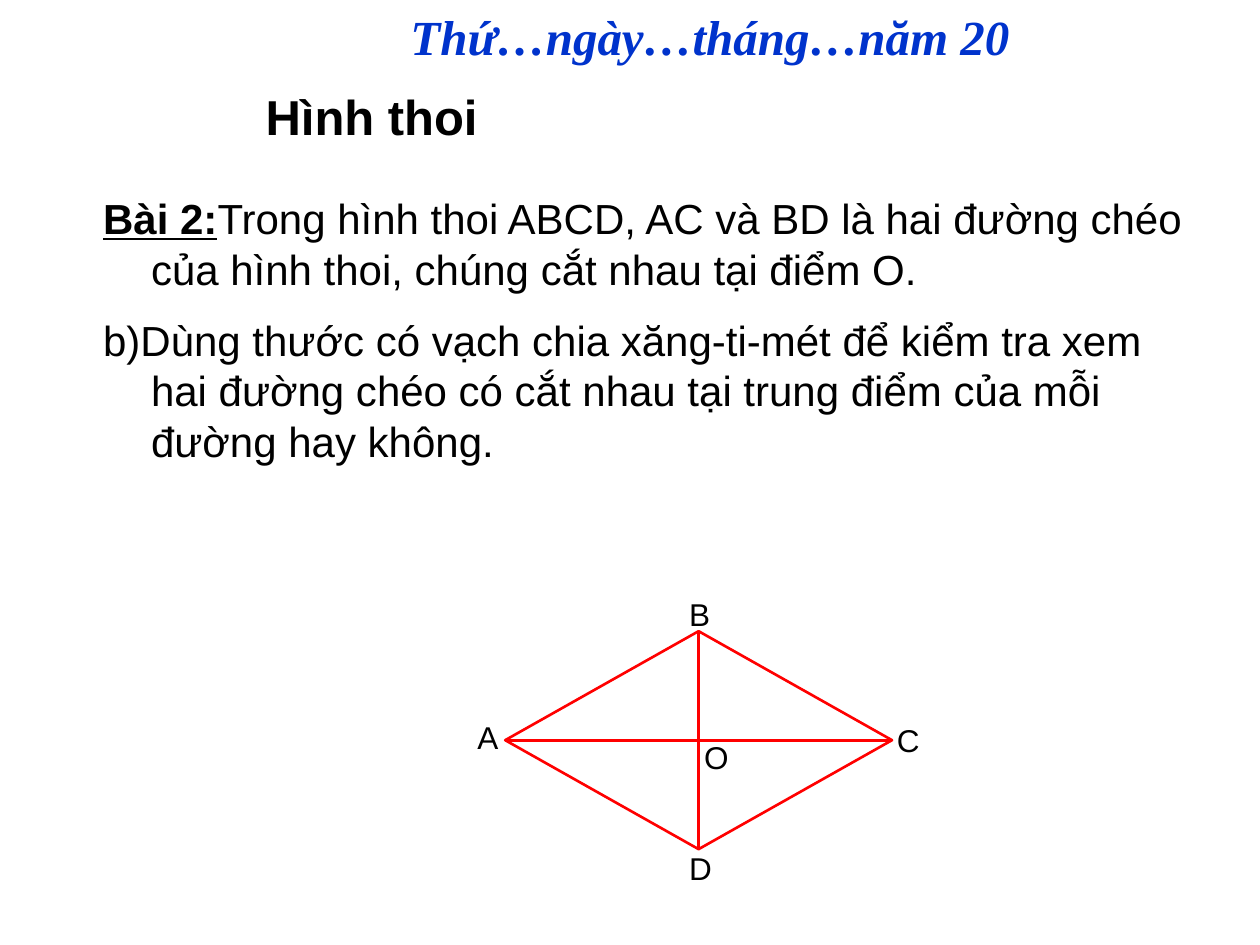
from dataclasses import dataclass

from lxml import etree
from pptx import Presentation
from pptx.dml.color import RGBColor
from pptx.enum.shapes import MSO_CONNECTOR, MSO_SHAPE
from pptx.oxml.ns import qn
from pptx.util import Inches, Pt

RHOMBUS = MSO_SHAPE.FLOWCHART_DECISION
STRAIGHT = MSO_CONNECTOR.STRAIGHT
TOP, LEFT, BOTTOM, RIGHT = range(4)
BLACK, BLUE, RED = "000000", "0033CC", "FF0000"
HANGING = Inches(0.38)


@dataclass
class Label:
    text: str
    left: float
    top: float
    width: float
    height: float = 0.4
    size: int = 18
    font: str = "Arial"
    color: str = BLACK
    bold: bool = False
    italic: bool = False
    wrap: bool = True


HEADINGS = [
    Label("Hình thoi", 2.01, 0.64, 3.25, 0.57, size=28, bold=True),
    Label("Thứ…ngày…tháng…năm 20", 3.16, 0, 4.96, 0.57, size=28,
          font="Times New Roman", color=BLUE, bold=True, italic=True, wrap=False),
]
POINTS = [
    Label("A", 3.69, 5.65, 0.4),
    Label("B", 5.37, 4.67, 0.42),
    Label("C", 7.02, 5.67, 0.42),
    Label("D", 5.37, 6.69, 0.42),
    Label("O", 5.49, 5.81, 0.5),
]
EXERCISE = [
    ("Bài 2:", "Trong hình thoi ABCD, AC và BD là hai đường chéo của hình thoi, "
               "chúng cắt nhau tại điểm O."),
    ("", "b)Dùng thước có vạch chia xăng-ti-mét để kiểm tra xem hai đường chéo "
         "có cắt nhau tại trung điểm của mỗi đường hay không."),
]


def rgb(color: str) -> RGBColor:
    return RGBColor.from_string(color)


def add_frame(page, left: float, top: float, width: float, height: float, wrap: bool = True):
    box = page.shapes.add_textbox(Inches(left), Inches(top), Inches(width), Inches(height))
    box.text_frame.word_wrap = wrap
    return box.text_frame


def set_font(font, name: str, size: int, color: str) -> None:
    font.name = name
    font.size = Pt(size)
    font.color.rgb = rgb(color)


def add_label(page, label: Label) -> None:
    frame = add_frame(page, label.left, label.top, label.width, label.height, label.wrap)
    para = frame.paragraphs[0]
    para.text = label.text
    set_font(para.font, label.font, label.size, label.color)
    para.font.bold = label.bold
    para.font.italic = label.italic


def add_exercise(page) -> None:
    frame = add_frame(page, 0.72, 1.48, 8.82, 2.3)
    for index, (lead, text) in enumerate(EXERCISE):
        para = frame.add_paragraph() if index else frame.paragraphs[0]
        set_font(para.font, "Arial", 24, BLACK)
        if index:
            para.space_before = Pt(12)
        properties = para._p.get_or_add_pPr()
        properties.set("marL", str(HANGING))
        properties.set("indent", str(-HANGING))
        if lead:
            span = para.add_run()
            span.text = lead
            span.font.bold = True
            span.font.underline = True
        para.add_run().text = text


def style_line(shape) -> None:
    shape.line.color.rgb = rgb(RED)
    shape.line.width = Pt(1.5)


def add_diagonal(group, rhombus, start: int, end: int) -> None:
    middle_x = rhombus.left + rhombus.width // 2
    middle_y = rhombus.top + rhombus.height // 2
    diagonal = group.shapes.add_connector(STRAIGHT, middle_x, middle_y, middle_x, middle_y)
    diagonal.begin_connect(rhombus, start)
    diagonal.end_connect(rhombus, end)
    style_line(diagonal)
    etree.SubElement(diagonal._element.spPr, qn("a:effectLst"))


def add_rhombus(page) -> None:
    group = page.shapes.add_group_shape()
    rhombus = group.shapes.add_shape(RHOMBUS, Inches(4.01), Inches(5.01),
                                     Inches(3.07), Inches(1.73))
    rhombus.shadow.inherit = False
    rhombus.fill.background()
    style_line(rhombus)
    add_diagonal(group, rhombus, LEFT, RIGHT)
    add_diagonal(group, rhombus, TOP, BOTTOM)


def main() -> None:
    deck = Presentation()
    deck.slide_width, deck.slide_height = Inches(10), Inches(7.5)
    page = deck.slides.add_slide(deck.slide_layouts[6])

    # Date line, title and exercise
    for heading in HEADINGS:
        add_label(page, heading)
    add_exercise(page)

    # Rhombus with its diagonals and point names
    add_rhombus(page)
    for point in POINTS:
        add_label(page, point)

    deck.save("out.pptx")


if __name__ == "__main__":
    main()
